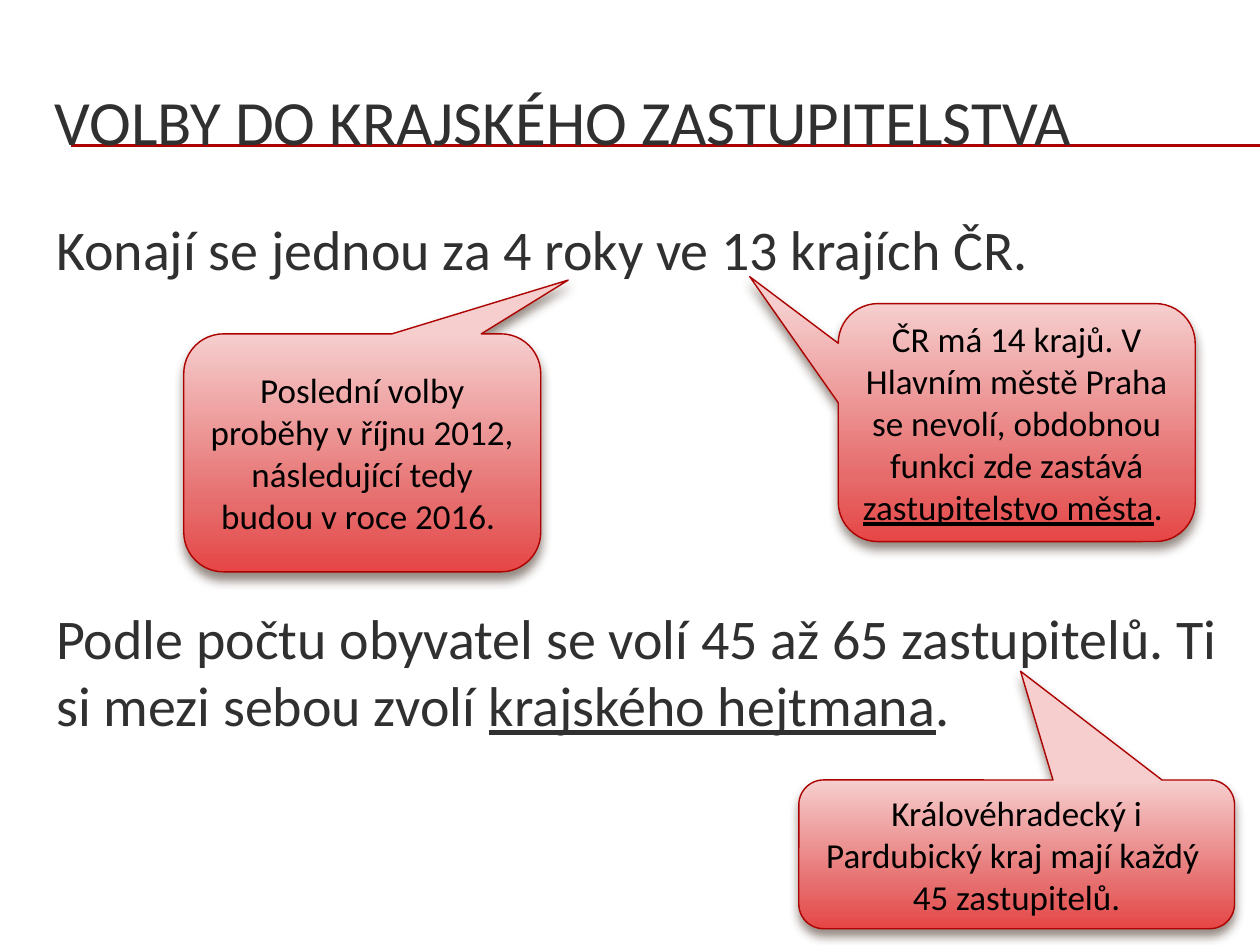
from copy import deepcopy
from dataclasses import dataclass

from lxml.etree import SubElement
from pptx import Presentation
from pptx.dml.color import RGBColor
from pptx.enum.shapes import MSO_CONNECTOR, MSO_SHAPE
from pptx.enum.text import MSO_ANCHOR, MSO_AUTO_SIZE, PP_ALIGN
from pptx.oxml.ns import qn
from pptx.util import Pt


@dataclass(frozen=True)
class Theme:
    font: str = "Calibri"
    title_size: int = 36
    body_size: int = 32
    callout_size: int = 20
    ink: str = "303030"
    callout_ink: str = "000000"
    accent: str = "AD0101"
    shadow: str = "4E3B30"
    gradient: tuple = ((0, "F6CECE"), (0.72, "E66C6C"), (1, "E64646"))


THEME = Theme()


def rgb(value):
    return RGBColor.from_string(value)


def place(shape, box):
    shape.left, shape.top, shape.width, shape.height = (Pt(v) for v in box)


def add_spans(para, spans, size, color):
    """Add (text, underlined) spans to a paragraph."""
    for text, underlined in spans:
        span = para.add_run()
        span.text = text
        span.font.name = THEME.font
        span.font.size = Pt(size)
        span.font.color.rgb = rgb(color)
        if underlined:
            span.font.underline = True


def add_rules(page, box):
    """Double rule behind the title."""
    left, top, width, gap = box
    for y in (top, top + gap):
        rule = page.shapes.add_connector(
            MSO_CONNECTOR.STRAIGHT, Pt(left), Pt(y), Pt(left + width), Pt(y))
        rule.line.color.rgb = rgb(THEME.accent)
        rule.line.width = Pt(0.75)
        SubElement(rule._element.spPr, qn("a:effectLst"))
        page.shapes._spTree.insert(2, rule._element)


def add_title(page, box, text):
    title = page.shapes.title
    place(title, box)
    frame = title.text_frame
    frame.vertical_anchor = MSO_ANCHOR.MIDDLE
    frame.auto_size = MSO_AUTO_SIZE.NONE
    para = frame.paragraphs[0]
    para.alignment = PP_ALIGN.LEFT
    add_spans(para, [(text, False)], THEME.title_size, THEME.ink)


def add_body(page, box, paragraphs):
    """Main text; each paragraph is (space before, spans)."""
    frame = page.shapes.add_textbox(*(Pt(v) for v in box)).text_frame
    frame.word_wrap = True
    for index, (space, spans) in enumerate(paragraphs):
        para = frame.add_paragraph() if index else frame.paragraphs[0]
        para.space_before = Pt(space)
        add_spans(para, spans, THEME.body_size, THEME.ink)


def fill_gradient(shape):
    shape.fill.gradient()
    shape.fill.gradient_angle = 270
    first = shape.fill._xPr.find(".//" + qn("a:gs"))
    first.addnext(deepcopy(first))
    for stop, (position, color) in zip(shape.fill.gradient_stops, THEME.gradient):
        stop.position = position
        stop.color.rgb = rgb(color)


def add_shadow(shape):
    shape.shadow.inherit = False
    effects = shape._element.spPr.find(qn("a:effectLst"))
    shadow = SubElement(effects, qn("a:outerShdw"), blurRad=str(Pt(6)),
                        dist=str(Pt(4)), dir="5400000", rotWithShape="0")
    color = SubElement(shadow, qn("a:srgbClr"), val=THEME.shadow)
    SubElement(color, qn("a:alpha"), val="60000")


def add_callout(page, box, tip, spans):
    """Rounded callout; tip is the pointer's offset from the centre, in box sizes."""
    callout = page.shapes.add_shape(
        MSO_SHAPE.ROUNDED_RECTANGULAR_CALLOUT, *(Pt(v) for v in box))
    for index, value in enumerate((*tip, 0.167)):
        callout.adjustments[index] = value
    fill_gradient(callout)
    callout.line.color.rgb = rgb(THEME.accent)
    callout.line.width = Pt(0.79)
    add_shadow(callout)
    frame = callout.text_frame
    frame.word_wrap = True
    frame.vertical_anchor = MSO_ANCHOR.MIDDLE
    para = frame.paragraphs[0]
    para.alignment = PP_ALIGN.CENTER
    add_spans(para, spans, THEME.callout_size, THEME.callout_ink)


def main():
    deck = Presentation()
    deck.slide_width, deck.slide_height = Pt(720), Pt(540)
    page = deck.slides.add_slide(deck.slide_layouts[5])

    # Heading
    add_rules(page, (40.5, 82.8, 679.5, 0.7))
    add_title(page, (24, 36, 684, 66), "VOLBY DO KRAJSKÉHO ZASTUPITELSTVA")

    # Main text, with room for callouts between the paragraphs
    add_body(page, (25, 119, 684, 356), [
        (0, [("Konají se jednou za 4 roky ve 13 krajích ČR.", False)]),
        (184, [("Podle počtu obyvatel se volí 45 až 65 zastupitelů. "
                "Ti si mezi sebou zvolí ", False),
               ("krajského hejtmana", True), (".", False)]),
    ])

    # Callouts
    add_callout(page, (479, 173.5, 204, 136), (-0.748, -0.613), [
        ("ČR má 14 krajů. V Hlavním městě Praha se nevolí, "
         "obdobnou funkci zde zastává ", False),
        ("zastupitelstvo města", True), (". ", False)])
    add_callout(page, (105, 190.8, 204, 136), (0.577, -0.726), [
        ("Poslední volby proběhy v říjnu 2012, "
         "následující tedy budou v roce 2016. ", False)])
    add_callout(page, (456.5, 445.7, 249, 85), (0.009, -1.231), [
        ("Královéhradecký i Pardubický kraj mají každý  45 zastupitelů.", False)])

    deck.save("out.pptx")


if __name__ == "__main__":
    main()
